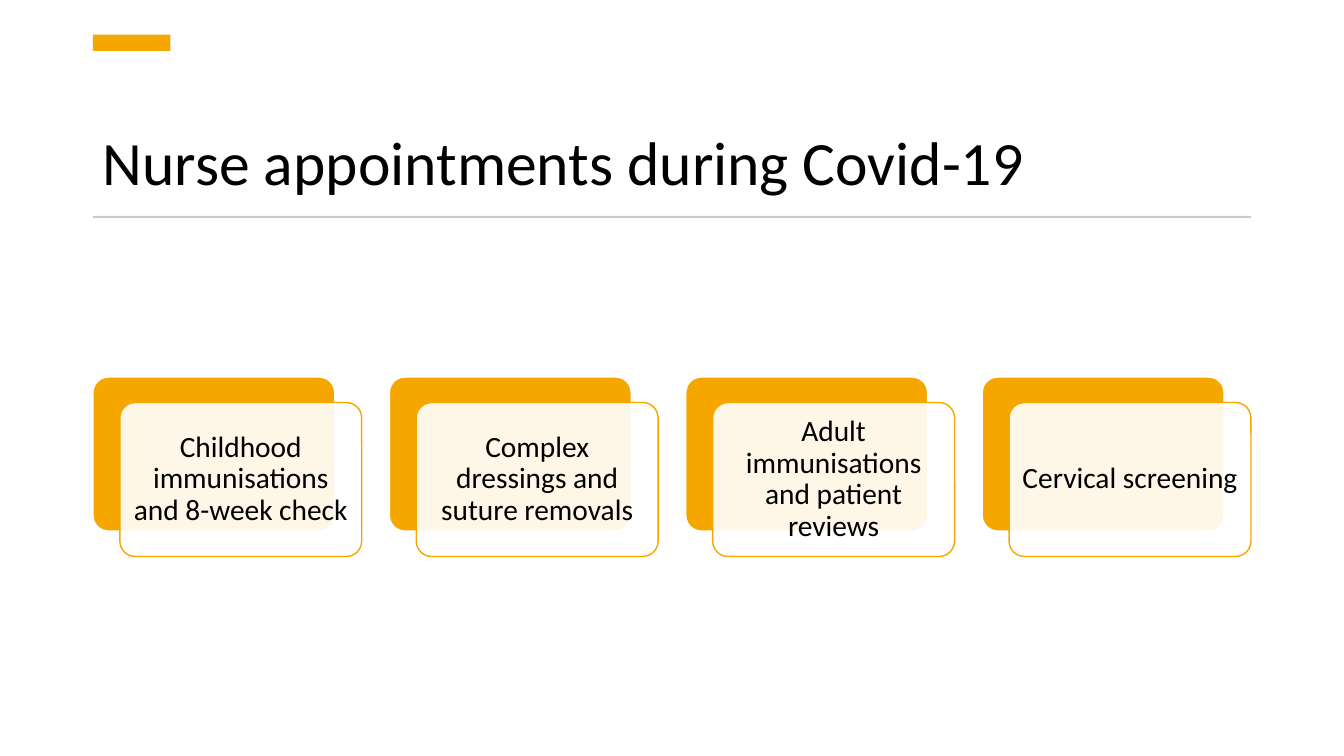
"""Build the slide on nurse appointments during Covid-19."""
from dataclasses import dataclass

from lxml import etree
from pptx import Presentation
from pptx.dml.color import RGBColor
from pptx.enum.shapes import MSO_SHAPE
from pptx.enum.text import MSO_ANCHOR, PP_ALIGN
from pptx.oxml.ns import qn
from pptx.util import Pt

RECTANGLE = MSO_SHAPE.RECTANGLE
ROUNDED = MSO_SHAPE.ROUNDED_RECTANGLE
MIDDLE, BOTTOM = MSO_ANCHOR.MIDDLE, MSO_ANCHOR.BOTTOM
LEFT, CENTER = PP_ALIGN.LEFT, PP_ALIGN.CENTER

SLIDE_WIDTH, SLIDE_HEIGHT = 960, 540
MARGIN, CONTENT_WIDTH = 66.4, 827.2
CARD_TOP, CARD_WIDTH, CARD_HEIGHT = 269.3, 172.8, 110
CARD_SHIFT_X, CARD_SHIFT_Y = 19.2, 18.2
APPOINTMENTS = (
    "Childhood immunisations and 8-week check",
    "Complex dressings and suture removals",
    "Adult immunisations and patient reviews",
    "Cervical screening",
)


@dataclass(frozen=True)
class Theme:
    """Colours, font and type sizes of the slide."""
    accent: str = "F5A700"
    rule: str = "C9C9C9"
    paper: str = "FFFFFF"
    ink: str = "000000"
    font: str = "Calibri"
    title_size: int = 44
    card_size: int = 21


class SlideBuilder:
    """Draws styled elements on one slide."""

    def __init__(self, slide, theme):
        self.slide = slide
        self.theme = theme

    def set_text(self, shape, text, size, alignment, anchor):
        """Put one styled paragraph into a shape."""
        frame = shape.text_frame
        frame.word_wrap = True
        frame.vertical_anchor = anchor
        paragraph = frame.paragraphs[0]
        paragraph.text = text
        paragraph.alignment = alignment
        paragraph.line_spacing = 0.9
        paragraph.font.name = self.theme.font
        paragraph.font.size = Pt(size)
        paragraph.font.color.rgb = RGBColor.from_string(self.theme.ink)

    def title(self, text, left, top, width, height):
        """Add the slide title."""
        box = self.slide.shapes.add_textbox(Pt(left), Pt(top), Pt(width), Pt(height))
        self.set_text(box, text, self.theme.title_size, LEFT, BOTTOM)

    def block(self, kind, left, top, width, height, fill, line=None):
        """Add a filled shape with an optional outline."""
        shape = self.slide.shapes.add_shape(kind, Pt(left), Pt(top), Pt(width), Pt(height))
        shape.shadow.inherit = False
        shape.fill.solid()
        shape.fill.fore_color.rgb = RGBColor.from_string(fill)
        if line:
            shape.line.color.rgb = RGBColor.from_string(line)
            shape.line.width = Pt(1)
        else:
            shape.line.fill.background()
        if kind == ROUNDED:
            shape.adjustments[0] = 0.1
        return shape

    def card(self, text, left, top):
        """Add a solid back card and a translucent labelled front card."""
        theme = self.theme
        self.block(ROUNDED, left, top, CARD_WIDTH, CARD_HEIGHT, theme.accent, theme.paper)
        front = self.block(ROUNDED, left + CARD_SHIFT_X, top + CARD_SHIFT_Y,
                           CARD_WIDTH, CARD_HEIGHT, theme.paper, theme.accent)
        color = front.element.spPr.find(qn("a:solidFill")).find(qn("a:srgbClr"))
        etree.SubElement(color, qn("a:alpha")).set("val", "90000")
        frame = front.text_frame
        frame.margin_left = frame.margin_right = Pt(6)
        frame.margin_top = frame.margin_bottom = Pt(3)
        self.set_text(front, text, theme.card_size, CENTER, MIDDLE)


def main():
    """Build and save the presentation."""
    presentation = Presentation()
    presentation.slide_width = Pt(SLIDE_WIDTH)
    presentation.slide_height = Pt(SLIDE_HEIGHT)
    theme = Theme()
    slide = presentation.slides.add_slide(presentation.slide_layouts[6])
    builder = SlideBuilder(slide, theme)

    builder.title("Nurse appointments during Covid-19", MARGIN, 54, CONTENT_WIDTH, 91.4)
    builder.block(RECTANGLE, MARGIN, 24.8, 55.4, 11.5, theme.accent)
    builder.block(RECTANGLE, MARGIN, 154.2, CONTENT_WIDTH, 1.4, theme.rule)

    card_span = CARD_WIDTH + CARD_SHIFT_X
    step = (CONTENT_WIDTH - card_span) / (len(APPOINTMENTS) - 1)
    for index, appointment in enumerate(APPOINTMENTS):
        builder.card(appointment, MARGIN + index * step, CARD_TOP)

    presentation.save("out.pptx")


if __name__ == "__main__":
    main()
